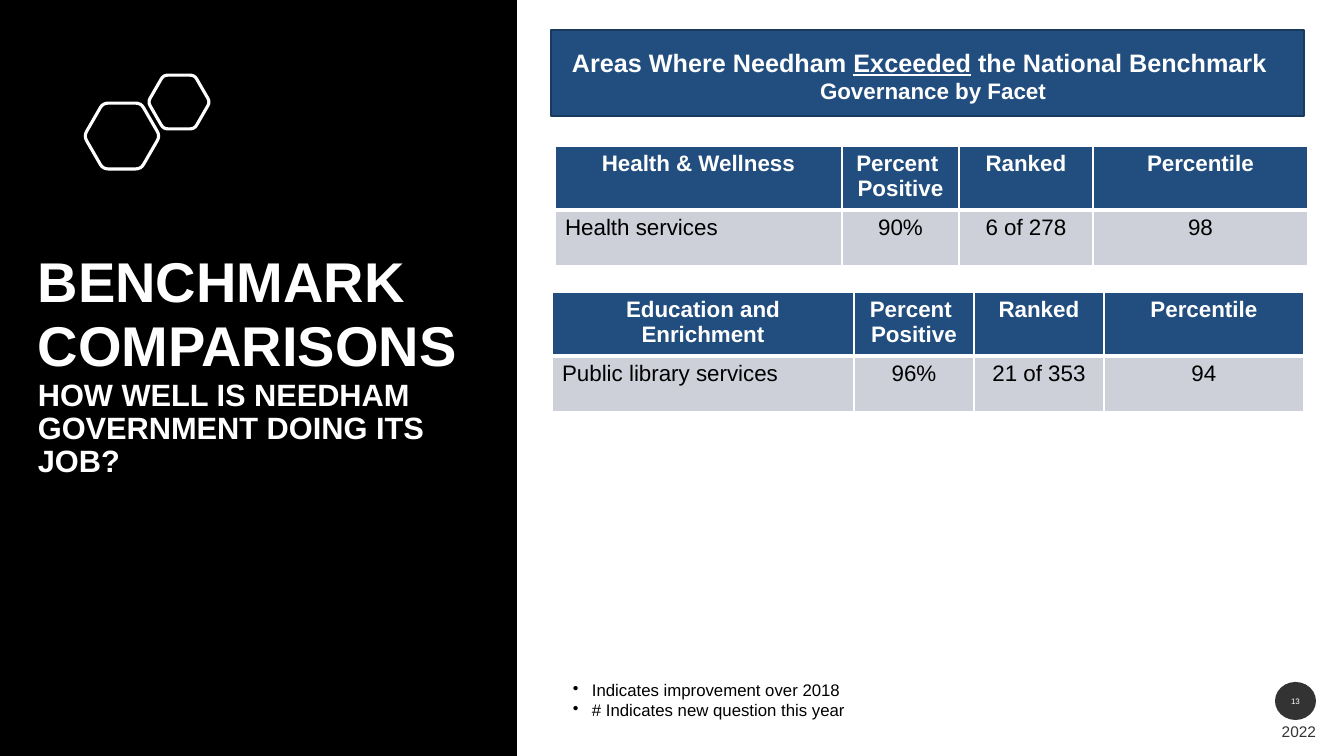
"""Build the benchmark comparison slide with its two facet tables."""
import math
from dataclasses import dataclass

import lxml.etree
import pptx
import pptx.dml.color
import pptx.enum.shapes
import pptx.enum.text
import pptx.oxml.ns
import pptx.util

EMU_PER_PX = 914400 / 100.8
ALIGN = pptx.enum.text.PP_ALIGN
ANCHOR = pptx.enum.text.MSO_ANCHOR
SHAPE = pptx.enum.shapes.MSO_SHAPE
qn = pptx.oxml.ns.qn


@dataclass(frozen=True)
class Theme:
    font: str = "Arial"
    white: str = "FFFFFF"
    black: str = "000000"
    navy: str = "224E7F"
    navy_edge: str = "193A5E"
    row: str = "CDD0D8"
    title: float = 40
    subtitle: float = 22
    heading: float = 18
    body: float = 16
    note: float = 12
    year: float = 11
    number: float = 5.7


THEME = Theme()


def px(value):
    return pptx.util.Emu(round(value * EMU_PER_PX))


def rgb(value):
    return pptx.dml.color.RGBColor.from_string(value)


def fade(element, percent):
    for color in element.iter(qn("a:srgbClr")):
        lxml.etree.SubElement(color, qn("a:alpha"), val=str(percent * 1000))


def write(frame, text, size=THEME.body, color=THEME.white, bold=False, underline=False,
          align=ALIGN.LEFT, spacing=None, bullet=None, indent=19, join=False):
    paragraph = frame.paragraphs[-1]
    if paragraph.runs and not join:
        paragraph = frame.add_paragraph()
    if not join:
        paragraph.alignment = align
        if spacing:
            paragraph.line_spacing = spacing
        if bullet:
            properties = paragraph._p.get_or_add_pPr()
            properties.set("marL", str(px(indent)))
            properties.set("indent", str(-px(indent)))
            lxml.etree.SubElement(properties, qn("a:buChar"), char=bullet)
    run = paragraph.add_run()
    run.text = text
    font = run.font
    font.name, font.size = THEME.font, pptx.util.Pt(size)
    font.bold, font.underline = bold, underline
    font.color.rgb = rgb(color)
    return run


class SlideBuilder:
    def __init__(self, slide, theme):
        self.slide, self.theme = slide, theme

    def shape(self, kind, left, top, width, height, fill, line=None):
        shape = self.slide.shapes.add_shape(kind, px(left), px(top), px(width), px(height))
        shape.shadow.inherit = False
        shape.fill.solid()
        shape.fill.fore_color.rgb = rgb(fill)
        if line:
            shape.line.color.rgb = rgb(line)
            shape.line.width = pptx.util.Pt(1)
        else:
            shape.line.fill.background()
        return shape

    def text_box(self, left, top, width, height, anchor=ANCHOR.TOP):
        box = self.slide.shapes.add_textbox(px(left), px(top), px(width), px(height))
        box.text_frame.word_wrap = True
        box.text_frame.vertical_anchor = anchor
        return box.text_frame

    def hexagon(self, center_x, center_y, radius, rounding=0.14, steps=4):
        corners = [(center_x + radius * math.cos(math.radians(60 * i)),
                    center_y + radius * math.sin(math.radians(60 * i))) for i in range(6)]
        points = []
        for i, corner in enumerate(corners):
            before, after = corners[i - 1], corners[(i + 1) % 6]
            for step in range(steps + 1):
                t = step / steps
                points.append(tuple(
                    px(c + rounding * ((1 - t) ** 2 * (b - c) + t ** 2 * (a - c)))
                    for b, c, a in zip(before, corner, after)))
        builder = self.slide.shapes.build_freeform(*points[0], scale=1.0)
        builder.add_line_segments(points[1:], close=True)
        shape = builder.convert_to_shape()
        shape.shadow.inherit = False
        shape.fill.background()
        shape.line.color.rgb = rgb(self.theme.white)
        shape.line.width = pptx.util.Pt(2.25)
        return shape

    def borders(self, cell, **widths):
        properties = cell._tc.get_or_add_tcPr()
        for index, side in enumerate("LRTB"):
            line = lxml.etree.Element(qn(f"a:ln{side}"),
                                      w=str(pptx.util.Pt(widths.get(side, 1))))
            fill = lxml.etree.SubElement(line, qn("a:solidFill"))
            lxml.etree.SubElement(fill, qn("a:srgbClr"), val=self.theme.white)
            properties.insert(index, line)

    def table(self, left, top, widths, heights, rows):
        table = self.slide.shapes.add_table(
            len(rows), len(widths), px(left), px(top), px(sum(widths)), px(sum(heights))).table
        for column, width in zip(table.columns, widths):
            column.width = px(width)
        for row, height in zip(table.rows, heights):
            row.height = px(height)
        for r, values in enumerate(rows):
            header = r == 0
            for c, value in enumerate(values):
                cell = table.cell(r, c)
                cell.fill.solid()
                cell.fill.fore_color.rgb = rgb(self.theme.navy if header else self.theme.row)
                self.borders(cell, **({"B": 3} if header else {"T": 3}))
                for line in value.split("\n"):
                    write(cell.text_frame, line, bold=header,
                          color=self.theme.white if header else self.theme.black,
                          align=ALIGN.CENTER if header or c else ALIGN.LEFT)


def main():
    presentation = pptx.Presentation()
    presentation.slide_width, presentation.slide_height = px(1344), px(756)
    slide = presentation.slides.add_slide(presentation.slide_layouts[6])
    builder = SlideBuilder(slide, THEME)

    builder.shape(SHAPE.RECTANGLE, 0, 0, 517, 756, THEME.black)
    hexagons = [builder.hexagon(122, 136, 38), builder.hexagon(179, 102, 31)]
    slide.shapes.add_group_shape(hexagons)

    year = builder.text_box(1190, 711, 136, 40, ANCHOR.MIDDLE)
    fade(write(year, "2022", THEME.year, THEME.black, align=ALIGN.RIGHT)._r, 80)
    badge = builder.shape(SHAPE.OVAL, 1275, 682, 41, 38, THEME.black)
    fade(badge._element.spPr, 80)
    badge.text_frame.word_wrap = True
    badge.text_frame.vertical_anchor = ANCHOR.MIDDLE
    write(badge.text_frame, "13", THEME.number, align=ALIGN.CENTER)

    builder.shape(SHAPE.RECTANGLE, 551, 30, 753, 86, THEME.navy, THEME.navy_edge)
    banner = builder.text_box(562, 42, 742, 68)
    write(banner, "Areas Where Needham ", THEME.heading, bold=True)
    write(banner, "Exceeded", THEME.heading, bold=True, underline=True, join=True)
    write(banner, " the National Benchmark", THEME.heading, bold=True, join=True)
    write(banner, "Governance by Facet", bold=True, align=ALIGN.CENTER)

    measures = ["Percent \nPositive", "Ranked", "Percentile"]
    heights = [63, 56]
    builder.table(555, 146, [287, 117, 134, 215], heights, [
        ["Health & Wellness", *measures],
        ["Health services", "90%", "6 of 278", "98"]])
    builder.table(552, 292, [302, 120, 130, 200], heights, [
        ["Education and Enrichment", *measures],
        ["Public library services", "96%", "21 of 353", "94"]])

    notes = builder.text_box(563, 675, 735, 50)
    for note in ("Indicates improvement over 2018", "# Indicates new question this year"):
        write(notes, note, THEME.note, THEME.black, bullet="•")

    title = builder.text_box(28, 129, 452, 472, ANCHOR.MIDDLE)
    write(title, "BENCHMARK COMPARISONS", THEME.title, bold=True, spacing=0.96)
    write(title, "HOW WELL IS NEEDHAM GOVERNMENT DOING ITS JOB?", THEME.subtitle,
          bold=True, spacing=0.9)

    presentation.save("out.pptx")


if __name__ == "__main__":
    main()
